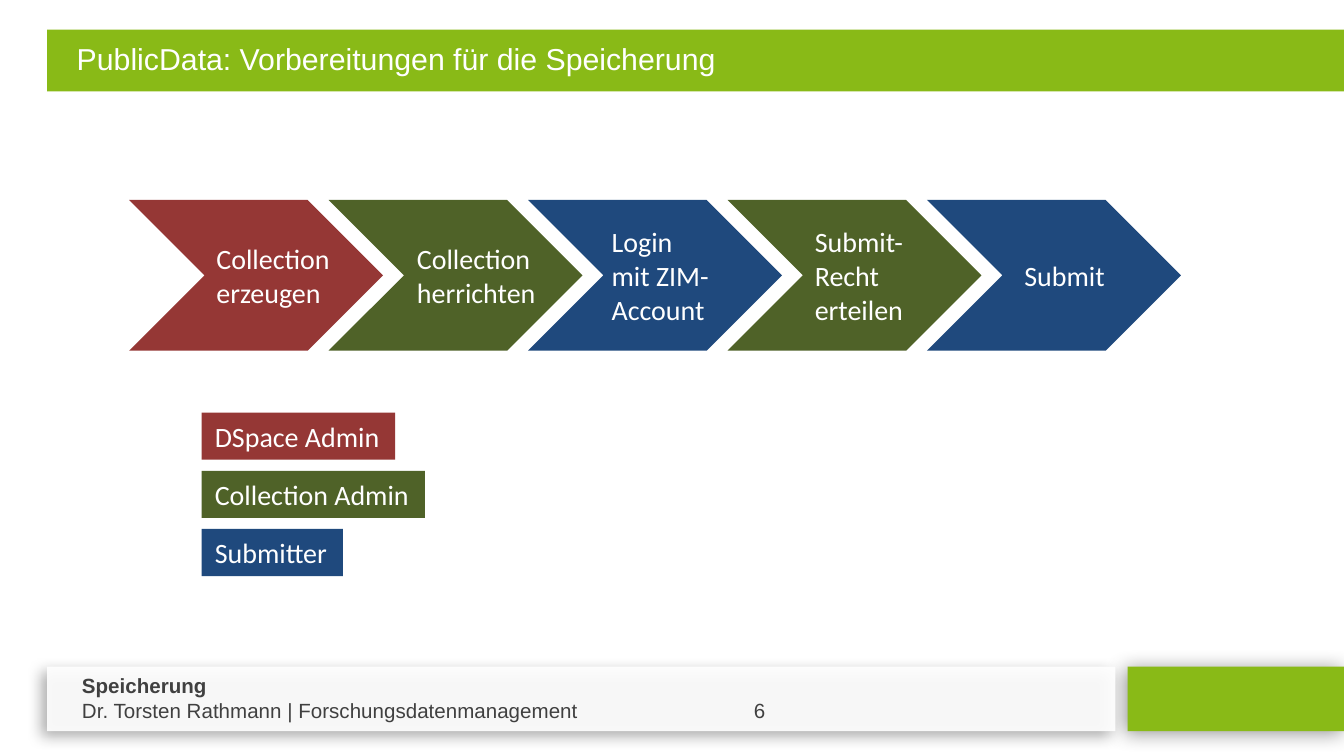
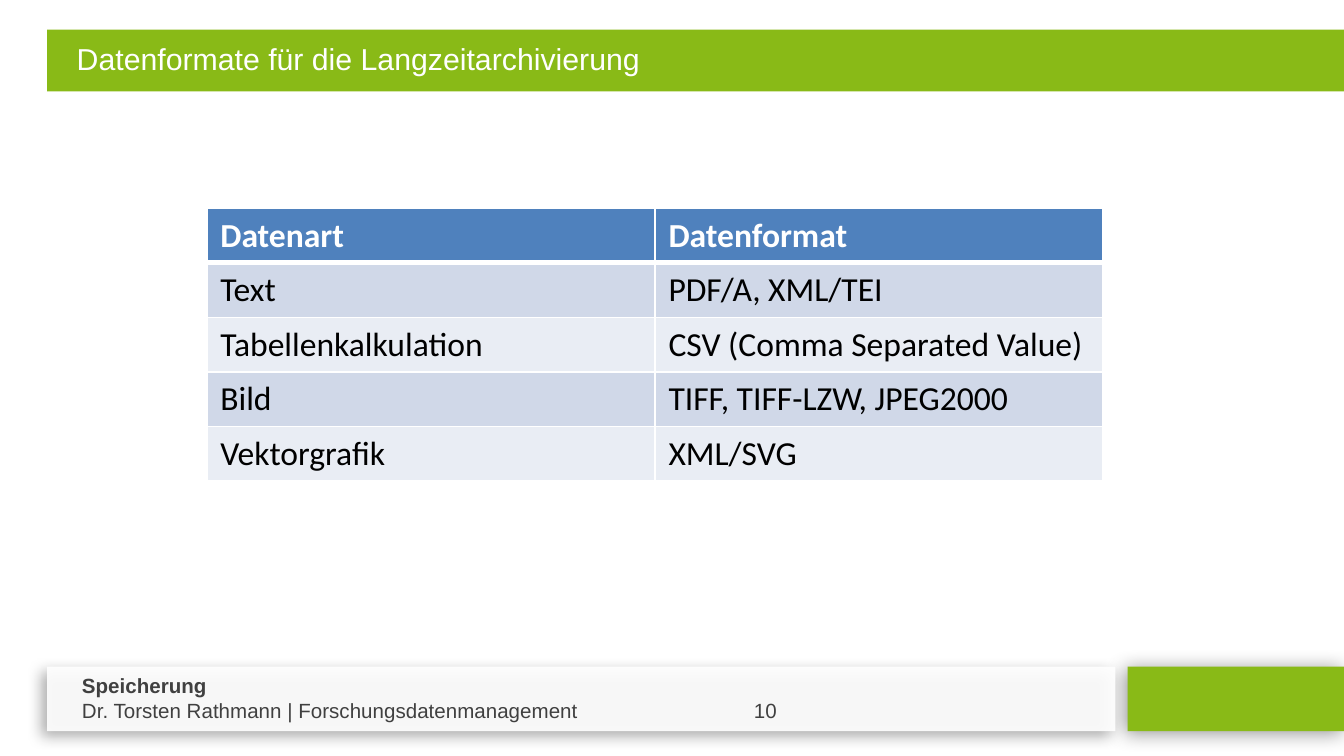
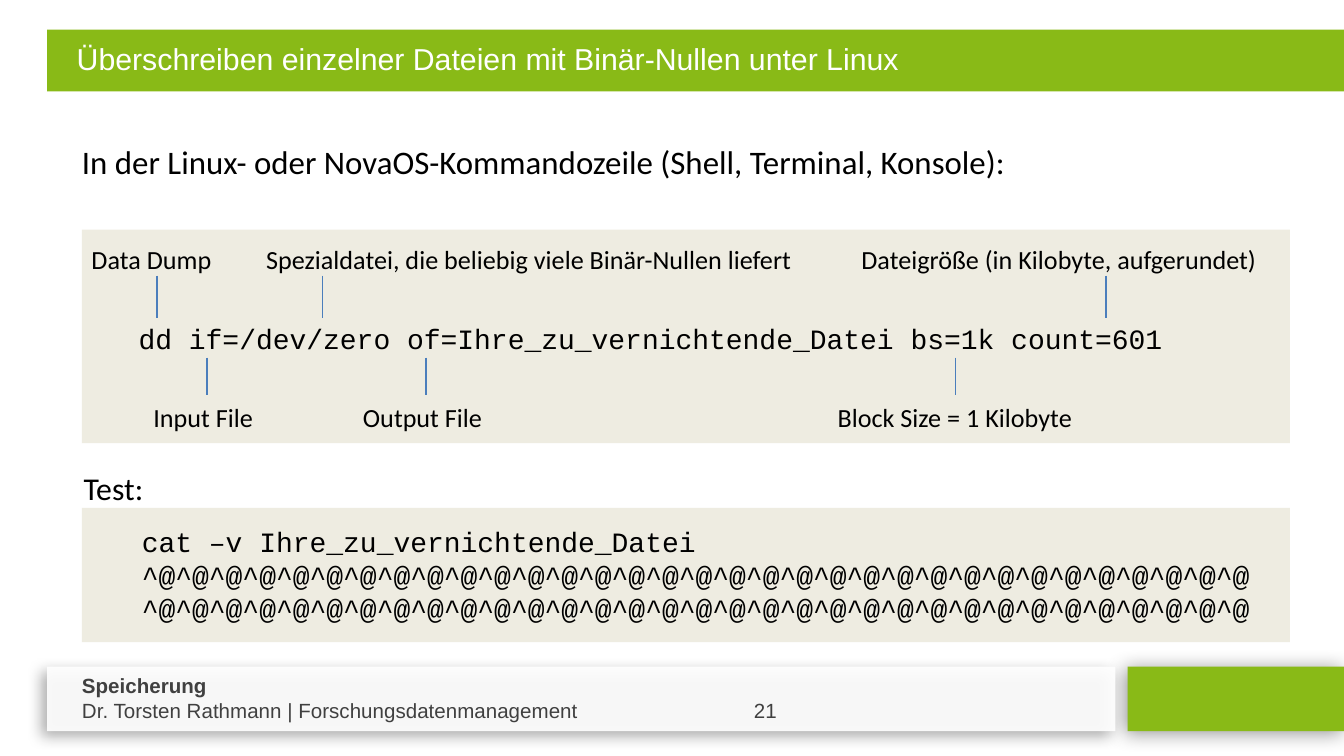
from dataclasses import dataclass, replace

from lxml.etree import SubElement
from pptx import Presentation
from pptx.dml.color import RGBColor
from pptx.enum.shapes import MSO_CONNECTOR, MSO_SHAPE
from pptx.enum.text import MSO_ANCHOR, MSO_AUTO_SIZE, PP_ALIGN
from pptx.oxml.ns import qn
from pptx.util import Cm, Pt

GREEN, WHITE, BLACK, GREY = "89BA17", "FFFFFF", "000000", "404040"
RED, OLIVE, NAVY = "953735", "4F6228", "1F497D"
HEADER_BLUE, ODD_ROW, EVEN_ROW = "4F81BD", "D0D8E8", "E9EDF4"
SAND, POINTER_BLUE = "EEECE1", "4B7EBC"


@dataclass(frozen=True)
class Box:
    left: float
    top: float
    width: float
    height: float

    def lengths(self) -> tuple:
        return Cm(self.left), Cm(self.top), Cm(self.width), Cm(self.height)


@dataclass(frozen=True)
class Style:
    size: float
    font: str = "Calibri"
    colour: str = BLACK
    bold: bool = False


@dataclass(frozen=True)
class Shadow:
    alpha: int
    blur: float
    distance: float
    angle: int


@dataclass(frozen=True)
class Step:
    text: str
    colour: str
    indent: float
    width: float


@dataclass(frozen=True)
class Role:
    name: str
    colour: str
    width: float


@dataclass(frozen=True)
class Note:
    text: str
    left: float
    width: float
    pointer: float
    above: bool


TITLE = Style(16.2, "Arial", WHITE)
FOOTER = Style(11, "Arial", GREY)
LABEL = Style(15, colour=WHITE)
CODE = Style(15, "Courier New")
NOTE = Style(14)
CELL = Style(18)
WIDE_INSET = (0.25, 0.13)
SLIM_INSET = (0.18, 0.1)

TITLE_BAND = Box(0.89, 0.56, 24.51, 1.17)
FOOTER_BAR = Box(0.89, 12.6, 20.19, 1.22)
FOOTER_BLOCK = Box(21.31, 12.6, 4.09, 1.22)
PAGE_TAB = 12.7

STEPS = [
    Step("Collection\nerzeugen", RED, 1.47, 2.64),
    Step("Collection\nherrichten", OLIVE, 1.49, 2.64),
    Step("Login\nmit ZIM-\nAccount", NAVY, 1.4, 2.31),
    Step("Submit-\nRecht\nerteilen", OLIVE, 1.47, 2.08),
    Step("Submit", NAVY, 1.66, 1.93),
]
ROLES = [
    Role("DSpace Admin", RED, 3.66),
    Role("Collection Admin", OLIVE, 4.22),
    Role("Submitter", NAVY, 2.67),
]
FORMATS = [
    ("Datenart", "Datenformat"),
    ("Text", "PDF/A, XML/TEI"),
    ("Tabellenkalkulation", "CSV (Comma Separated Value)"),
    ("Bild", "TIFF, TIFF-LZW, JPEG2000"),
    ("Vektorgrafik", "XML/SVG"),
]
NOTES = [
    Note("Data Dump", 1.55, 2.84, 2.97, True),
    Note("Spezialdatei, die beliebig viele Binär-Nullen liefert", 4.85, 10.44, 6.1, True),
    Note("Dateigröße (in Kilobyte, aufgerundet)", 16.1, 7.92, 20.9, True),
    Note("Input File", 2.72, 2.29, 3.91, False),
    Note("Output File", 6.68, 2.67, 8.05, False),
    Note("Block Size = 1 Kilobyte", 15.65, 4.85, 18.06, False),
]


def rgb(colour: str) -> RGBColor:
    return RGBColor.from_string(colour)


def add_run(paragraph, text: str, style: Style) -> None:
    run = paragraph.add_run()
    run.text = text
    run.font.size = Pt(style.size)
    run.font.name = style.font
    run.font.bold = style.bold
    run.font.color.rgb = rgb(style.colour)


def write(frame, paragraphs: list[tuple[str, Style]]) -> None:
    for number, (text, style) in enumerate(paragraphs):
        paragraph = frame.add_paragraph() if number else frame.paragraphs[0]
        paragraph.alignment = PP_ALIGN.LEFT
        for line_number, line in enumerate(text.split("\n")):
            if line_number:
                paragraph.add_line_break()
            add_run(paragraph, line, style)


def set_insets(frame, insets: tuple[float, float]) -> None:
    frame.margin_left = frame.margin_right = Cm(insets[0])
    frame.margin_top = frame.margin_bottom = Cm(insets[1])


def add_text(slide, box: Box, paragraphs: list[tuple[str, Style]],
             insets: tuple[float, float] = SLIM_INSET, wrap: bool = True):
    frame = slide.shapes.add_textbox(*box.lengths()).text_frame
    frame.word_wrap = wrap
    set_insets(frame, insets)
    write(frame, paragraphs)
    return frame


def add_area(slide, box: Box, colour: str, kind=MSO_SHAPE.RECTANGLE):
    area = slide.shapes.add_shape(kind, *box.lengths())
    area.fill.solid()
    area.fill.fore_color.rgb = rgb(colour)
    area.line.fill.background()
    area.shadow.inherit = False
    return area


def add_colour(parent, colour: str, alpha: int) -> None:
    tint = SubElement(parent, qn("a:srgbClr"), val=colour)
    SubElement(tint, qn("a:alpha"), val=str(alpha * 1000))


def cast_shadow(area, shadow: Shadow) -> None:
    effects = area.element.spPr.find(qn("a:effectLst"))
    outer = SubElement(
        effects, qn("a:outerShdw"), blurRad=str(Pt(shadow.blur)), dist=str(Pt(shadow.distance)),
        dir=str(shadow.angle * 60000), algn="ctr", rotWithShape="0")
    add_colour(outer, BLACK, shadow.alpha)


def add_footer(slide, page: int) -> None:
    cast_shadow(add_area(slide, FOOTER_BLOCK, GREEN), Shadow(42, 10.8, 2, 142))
    bar = add_area(slide, FOOTER_BAR, WHITE)
    fill = bar.element.spPr.find(qn("a:solidFill"))
    fill.clear()
    add_colour(fill, WHITE, 91)
    cast_shadow(bar, Shadow(34, 7.5, 4, 145))
    frame = add_text(slide, Box(1.3, 12.6, 15.19, 1.19), [
        ("Speicherung", replace(FOOTER, bold=True)),
        (f"Dr. Torsten Rathmann | Forschungsdatenmanagement\t{page}", FOOTER),
    ], WIDE_INSET)
    properties = frame.paragraphs[1]._p.get_or_add_pPr()
    tabs = SubElement(properties, qn("a:tabLst"))
    SubElement(tabs, qn("a:tab"), pos=str(Cm(PAGE_TAB)), algn="l")


def add_slide(deck, heading: str, page: int):
    slide = deck.slides.add_slide(deck.slide_layouts[5])
    add_footer(slide, page)
    band = add_area(slide, TITLE_BAND, GREEN)
    title = slide.shapes.title
    band.element.addnext(title.element)
    title.left, title.top, title.width, title.height = replace(TITLE_BAND, height=0.89).lengths()
    frame = title.text_frame
    frame.auto_size = MSO_AUTO_SIZE.NONE
    frame.vertical_anchor = MSO_ANCHOR.TOP
    frame.word_wrap = True
    set_insets(frame, (0.56, 0.2))
    write(frame, [(heading, TITLE)])
    return slide


def add_steps(slide) -> None:
    first = Box(2.44, 3.78, 4.8, 2.85)
    pitch = 3.77
    for number, step in enumerate(STEPS):
        chevron = replace(first, left=first.left + number * pitch)
        add_area(slide, chevron, step.colour, MSO_SHAPE.CHEVRON)
        height = 0.2 + 0.635 * len(step.text.split("\n"))
        top = first.top + (first.height - height) / 2
        add_text(slide, Box(chevron.left + step.indent, top, step.width, height),
                 [(step.text, LABEL)], wrap=False)


def add_roles(slide) -> None:
    for number, role in enumerate(ROLES):
        tag = add_area(slide, Box(3.81, 7.8 + 1.1 * number, role.width, 0.89), role.colour)
        tag.text_frame.word_wrap = False
        set_insets(tag.text_frame, WIDE_INSET)
        write(tag.text_frame, [(role.name, LABEL)])


def set_borders(cell, top: float, bottom: float) -> None:
    properties = cell._tc.get_or_add_tcPr()
    for place, (side, width) in enumerate([("L", 1), ("R", 1), ("T", top), ("B", bottom)]):
        border = SubElement(properties, qn(f"a:ln{side}"), w=str(Pt(width)))
        fill = SubElement(border, qn("a:solidFill"))
        SubElement(fill, qn("a:srgbClr"), val=WHITE)
        properties.insert(place, border)


def add_formats(slide) -> None:
    box = Box(3.91, 3.94, 16.94, 5.15)
    table = slide.shapes.add_table(len(FORMATS), 2, *box.lengths()).table
    for row, texts in enumerate(FORMATS):
        table.rows[row].height = Cm(box.height / len(FORMATS))
        if row == 0:
            style, colour = replace(CELL, colour=WHITE, bold=True), HEADER_BLUE
        else:
            style, colour = CELL, ODD_ROW if row % 2 else EVEN_ROW
        for column, text in enumerate(texts):
            cell = table.cell(row, column)
            cell.fill.solid()
            cell.fill.fore_color.rgb = rgb(colour)
            set_borders(cell, 3 if row == 1 else 1, 3 if row == 0 else 1)
            write(cell.text_frame, [(text, style)])


def add_pointer(slide, x: float, start: float, end: float) -> None:
    pointer = slide.shapes.add_connector(MSO_CONNECTOR.STRAIGHT, Cm(x), Cm(start), Cm(x), Cm(end))
    pointer.line.color.rgb = rgb(POINTER_BLUE)
    pointer.line.width = Pt(0.75)
    SubElement(pointer.element.spPr, qn("a:effectLst"))


def add_notes(slide) -> None:
    for note in NOTES:
        top, start, end = (4.5, 5.21, 6.02) if note.above else (7.49, 6.76, 7.47)
        add_text(slide, Box(note.left, top, note.width, 0.79), [(note.text, NOTE)], wrap=False)
        add_pointer(slide, note.pointer, start, end)


def add_commands(slide) -> None:
    add_text(slide, Box(1.3, 2.54, 19.66, 0.91),
             [("In der Linux- oder NovaOS-Kommandozeile (Shell, Terminal, Konsole):", Style(17.6))],
             WIDE_INSET)
    command_area = Box(1.55, 4.34, 22.83, 4.04)
    add_area(slide, command_area, SAND)
    add_text(slide, Box(2.44, 5.97, 20.68, 0.84),
             [("dd if=/dev/zero of=Ihre_zu_vernichtende_Datei bs=1k count=601", CODE)])
    add_notes(slide)
    test = add_text(slide, Box(1.4, 8.84, 19.66, 0.91), [("Test:", Style(17))])
    test.paragraphs[0].line_spacing = 0.9
    output = add_area(slide, replace(command_area, top=9.6, height=2.54), SAND).text_frame
    output.word_wrap = True
    output.vertical_anchor = MSO_ANCHOR.MIDDLE
    set_insets(output, SLIM_INSET)
    zeros = "   " + "^@" * 33
    write(output, [("   cat –v Ihre_zu_vernichtende_Datei", CODE), (zeros, CODE), (zeros, CODE)])


def main() -> None:
    deck = Presentation()
    deck.slide_width, deck.slide_height = Cm(25.4), Cm(14.29)

    preparation = add_slide(deck, "PublicData: Vorbereitungen für die Speicherung", 6)
    add_steps(preparation)
    add_roles(preparation)

    add_formats(add_slide(deck, "Datenformate für die Langzeitarchivierung", 10))

    add_commands(add_slide(
        deck, "Überschreiben einzelner Dateien mit Binär-Nullen unter Linux", 21))

    deck.save("out.pptx")


if __name__ == "__main__":
    main()
